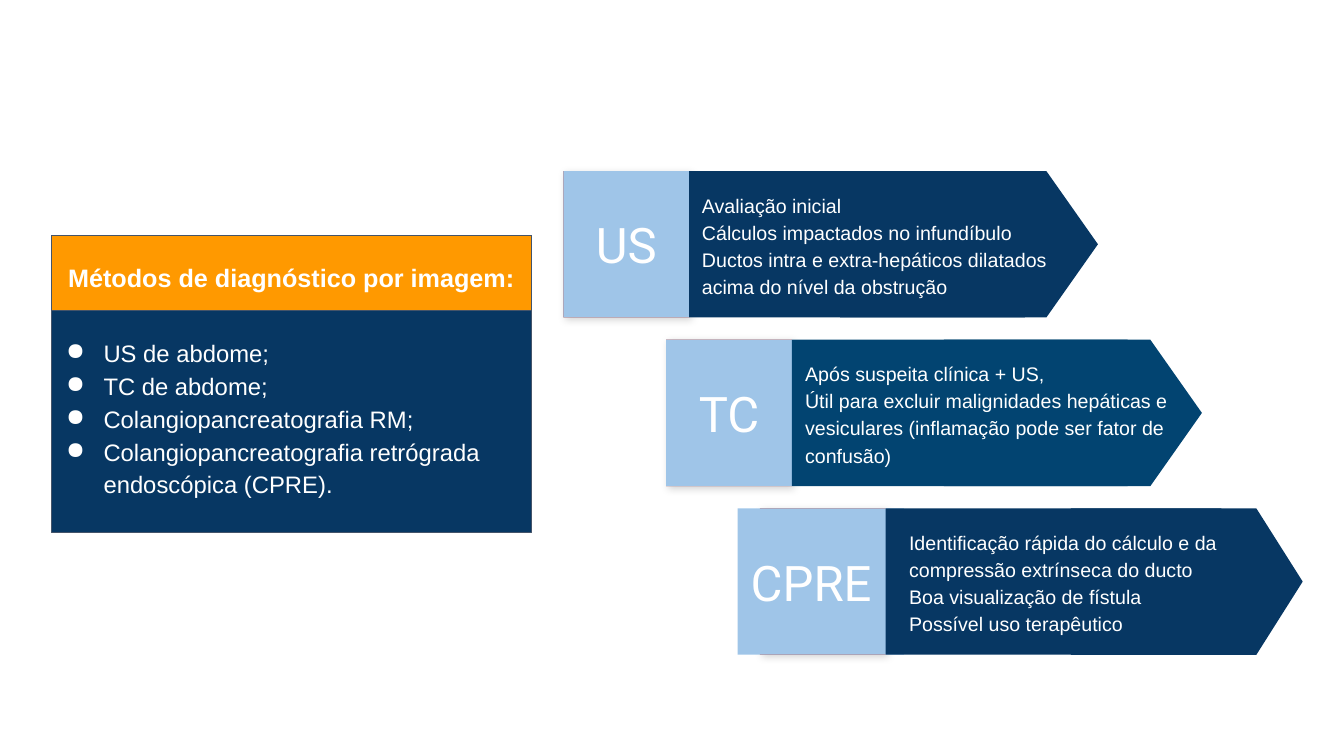
from dataclasses import dataclass

from lxml.etree import SubElement
from pptx import Presentation
from pptx.dml.color import RGBColor
from pptx.enum.shapes import MSO_SHAPE
from pptx.enum.text import MSO_ANCHOR, PP_ALIGN
from pptx.oxml.ns import qn
from pptx.shapes.autoshape import Shape
from pptx.slide import Slide
from pptx.util import Cm, Pt

NAVY, TEAL, SKY, ORANGE = "073763", "024471", "9FC5E8", "FF9900"
RUST, SLATE, WHITE = "B02C20", "44546A", "FFFFFF"

ROW_TOP, ROW_PITCH, ROW_HEIGHT = 4.31, 4.25, 3.69
BASE_WIDTH, BODY_WIDTH = 3.17, 8.46
PANEL_LEFT, PANEL_TOP, PANEL_WIDTH = 1.3, 5.94, 12.09


@dataclass
class Box:
    left: float
    top: float
    width: float
    height: float


@dataclass
class Exam:
    label: str
    lines: list[str]
    color: str
    base_left: float
    tag_left: float
    tag_width: float
    tag_align: PP_ALIGN
    head_left: float
    head_length: float
    text_left: float
    text_width: float


METHODS = [
    "US de abdome;",
    "TC de abdome;",
    "Colangiopancreatografia RM;",
    "Colangiopancreatografia retrógrada endoscópica (CPRE).",
]

EXAMS = [
    Exam("US",
         ["Avaliação inicial",
          "Cálculos impactados no infundíbulo",
          "Ductos intra e extra-hepáticos dilatados acima do nível da obstrução"],
         NAVY, 14.2, 14.2, BASE_WIDTH, PP_ALIGN.CENTER, 21.17, 6.5, 17.36, 10.03),
    Exam("TC",
         ["Após suspeita clínica + US,",
          "Útil para excluir malignidades hepáticas e vesiculares "
          "(inflamação pode ser fator de confusão)"],
         TEAL, 16.79, 16.79, BASE_WIDTH, PP_ALIGN.CENTER, 23.79, 6.5, 19.96, 10.31),
    Exam("CPRE",
         ["Identificação rápida do cálculo e da compressão extrínseca do ducto",
          "Boa visualização de fístula",
          "Possível uso terapêutico"],
         NAVY, 19.15, 18.59, 4.19, PP_ALIGN.LEFT, 26.99, 5.84, 22.58, 8.89),
]


def rgb(color: str) -> RGBColor:
    return RGBColor.from_string(color)


def add_block(s: Slide, box: Box, fill: str, line: str | None = None,
              kind: MSO_SHAPE = MSO_SHAPE.RECTANGLE) -> Shape:
    sp = s.shapes.add_shape(kind, Cm(box.left), Cm(box.top), Cm(box.width), Cm(box.height))
    sp.shadow.inherit = False
    sp.fill.solid()
    sp.fill.fore_color.rgb = rgb(fill)
    if line:
        sp.line.color.rgb = rgb(line)
        sp.line.width = Pt(0.75)
    else:
        sp.line.fill.background()
    return sp


def write(sp: Shape, lines: list[str], size: float, inset: float = 0.33, font: str = "Arial",
          bold: bool = False, align: PP_ALIGN = PP_ALIGN.LEFT, spacing: float = 1.15,
          anchor: MSO_ANCHOR = MSO_ANCHOR.MIDDLE) -> None:
    tf = sp.text_frame
    tf.word_wrap = True
    tf.vertical_anchor = anchor
    tf.margin_left = tf.margin_right = tf.margin_top = tf.margin_bottom = Cm(inset)
    tf.text = "\n".join(lines)
    for p in tf.paragraphs:
        p.alignment = align
        p.line_spacing = spacing
        for r in p.runs:
            r.font.name = font
            r.font.size = Pt(size)
            r.font.bold = bold
            r.font.color.rgb = rgb(WHITE)


def add_text(s: Slide, box: Box) -> Shape:
    return s.shapes.add_textbox(Cm(box.left), Cm(box.top), Cm(box.width), Cm(box.height))


def add_bullets(sp: Shape) -> None:
    for p in sp.text_frame.paragraphs:
        pPr = p._p.get_or_add_pPr()
        pPr.set("marL", str(Cm(1.27)))
        pPr.set("indent", str(-Cm(0.94)))
        color = SubElement(pPr, qn("a:buClr"))
        SubElement(color, qn("a:srgbClr"), val=WHITE)
        SubElement(pPr, qn("a:buChar"), char="●")


def add_soft_shadow(sp: Shape) -> None:
    effects = sp._element.spPr.find(qn("a:effectLst"))
    shadow = SubElement(effects, qn("a:outerShdw"), blurRad=str(Pt(5.6)),
                        dist=str(Pt(2.2)), dir=str(45 * 60000))
    color = SubElement(shadow, qn("a:srgbClr"), val="000000")
    SubElement(color, qn("a:alpha"), val="17000")


def draw_panel(s: Slide) -> None:
    add_block(s, Box(PANEL_LEFT, PANEL_TOP, PANEL_WIDTH, 7.49), NAVY, SLATE)
    sp = add_text(s, Box(1.09, 8.18, PANEL_WIDTH, 4.7))
    write(sp, METHODS, 17, inset=0.25, anchor=MSO_ANCHOR.TOP)
    add_bullets(sp)
    add_block(s, Box(PANEL_LEFT, PANEL_TOP, PANEL_WIDTH, 1.88), ORANGE, SLATE)
    sp = add_text(s, Box(1.4, 6.25, 11.89, 1.27))
    write(sp, ["Métodos de diagnóstico por imagem:"], 18, inset=0.25, bold=True,
          align=PP_ALIGN.CENTER, anchor=MSO_ANCHOR.TOP)


def draw_exam(s: Slide, exam: Exam, top: float) -> None:
    base = add_block(s, Box(exam.base_left, top, BASE_WIDTH, ROW_HEIGHT), RUST)
    add_soft_shadow(base)
    tag = add_block(s, Box(exam.tag_left, top, exam.tag_width, ROW_HEIGHT), SKY)
    write(tag, [exam.label], 35, font="Roboto", align=exam.tag_align, spacing=1.0)
    add_block(s, Box(exam.base_left + BASE_WIDTH, top, BODY_WIDTH, ROW_HEIGHT), exam.color)
    shift = (exam.head_length - ROW_HEIGHT) / 2
    head = add_block(s, Box(exam.head_left + shift, top - shift, ROW_HEIGHT, exam.head_length),
                     exam.color, kind=MSO_SHAPE.FLOWCHART_OFFPAGE_CONNECTOR)
    head.rotation = 270
    sp = add_text(s, Box(exam.text_left, top, exam.text_width, ROW_HEIGHT))
    write(sp, exam.lines, 14)


def main() -> None:
    prs = Presentation()
    prs.slide_width, prs.slide_height = Cm(33.87), Cm(19.05)
    s = prs.slides.add_slide(prs.slide_layouts[6])
    draw_panel(s)
    for i, exam in enumerate(EXAMS):
        draw_exam(s, exam, ROW_TOP + i * ROW_PITCH)
    prs.save("out.pptx")


if __name__ == "__main__":
    main()
